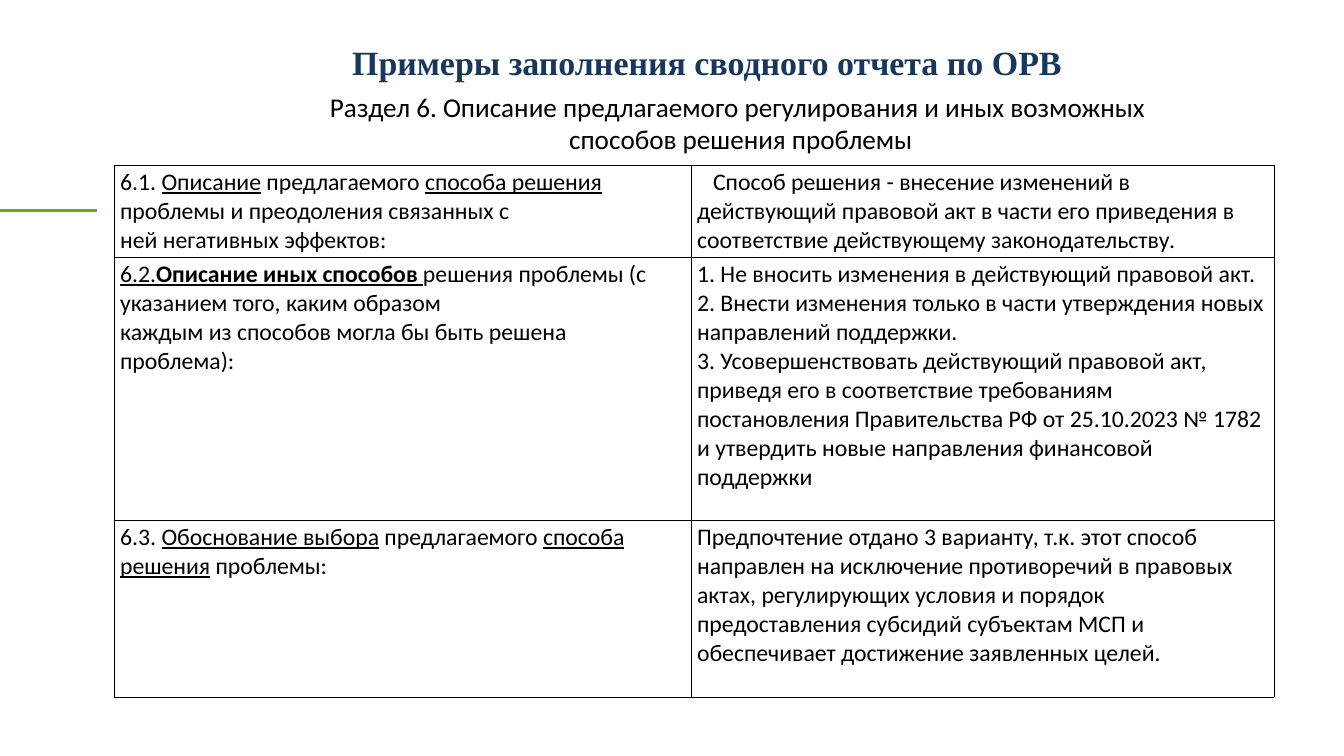
from pptx import Presentation
from pptx.dml.color import RGBColor as Rgb
from pptx.enum.shapes import MSO_SHAPE as Kind
from pptx.enum.text import PP_ALIGN as Align
from pptx.oxml import parse_xml
from pptx.oxml.ns import nsdecls
from pptx.util import Pt

PX = 14966  # EMU in one px
THEME = {
    "title": ("Times New Roman", 40, "17375E", True),
    "lead": ("Calibri", 32, "000000", False),
    "cell": ("Calibri", 28, "000000", False),
    "accent": "66A82F",
    "border": "000000",
}
U, B = "under", "under bold"


def write(frame, paras, role, align=Align.LEFT):
    """Fill a frame with paragraphs, each a list of (text, style) runs."""
    name, size, color, bold = THEME[role]
    frame.word_wrap = True
    for i, runs in enumerate(paras):
        para = frame.paragraphs[0] if i == 0 else frame.add_paragraph()
        para.alignment = align
        font = para.font
        font.name, font.size, font.bold = name, Pt(size), bold
        font.color.rgb = Rgb.from_string(color)
        for text, style in runs:
            run = para.add_run()
            run.text = text
            if "under" in style:
                run.font.underline = True
            if "bold" in style:
                run.font.bold = True


def edge(cell):
    """Draw a thin line on all four sides of a cell."""
    props = cell._tc.get_or_add_tcPr()
    for i, side in enumerate("LRTB"):
        props.insert(i, parse_xml(
            f'<a:ln{side} {nsdecls("a")} w="12700"><a:solidFill>'
            f'<a:srgbClr val="{THEME["border"]}"/></a:solidFill></a:ln{side}>'))


deck = Presentation()
deck.slide_width, deck.slide_height = 1344 * PX, 756 * PX
slide = deck.slides.add_slide(deck.slide_layouts[6])
shapes = slide.shapes

# Green accent bar
bar = shapes.add_shape(Kind.RECTANGLE, 0, 209 * PX, 97 * PX, 3 * PX)
bar.shadow.inherit = False
bar.fill.solid()
bar.fill.fore_color.rgb = Rgb.from_string(THEME["accent"])
bar.line.fill.background()

# Title and section heading
heads = [
    ("title", (237, 39, 940, 47), ["Примеры заполнения сводного отчета по ОРВ"]),
    ("lead", (304, 87, 874, 72),
     ["Раздел 6. Описание предлагаемого регулирования и иных возможных ",
      "способов решения проблемы"]),
]
for role, spot, lines in heads:
    box = shapes.add_textbox(*(n * PX for n in spot))
    write(box.text_frame, [[(line, "")] for line in lines], role, Align.CENTER)

# Report table
rows = [
    ([[("6.1. ", ""), ("Описание", U), (" предлагаемого ", ""),
       ("способа решения ", U), ("проблемы и преодоления связанных с", "")],
      [("ней негативных эффектов:", "")]],
     [[("Способ решения - внесение изменений в действующий правовой акт "
        "в части его приведения в", "")],
      [("соответствие действующему законодательству.", "")]]),
    ([[("6.2.", U), ("Описание иных способов ", B),
       ("решения проблемы (с указанием того, каким образом", "")],
      [("каждым из способов могла бы быть решена проблема):", "")]],
     [[("1. Не вносить изменения в действующий правовой акт.", "")],
      [("2. Внести изменения только в части утверждения новых "
        "направлений поддержки.", "")],
      [("3. Усовершенствовать действующий правовой акт, приведя его в "
        "соответствие требованиям постановления Правительства РФ от "
        "25.10.2023 № 1782 и утвердить новые направления финансовой "
        "поддержки", "")]]),
    ([[("6.3. ", ""), ("Обоснование выбора", U), (" предлагаемого ", ""),
       ("способа", U), (" ", ""), ("решения", U), (" проблемы:", "")]],
     [[("Предпочтение отдано 3 варианту, т.к. этот способ направлен на "
        "исключение противоречий в правовых актах, регулирующих условия и "
        "порядок предоставления субсидий субъектам МСП и обеспечивает "
        "достижение заявленных целей.", "")]]),
]
wide, high = (577, 583), (92, 263, 177)
table = shapes.add_table(len(high), len(wide), 114 * PX, 165 * PX,
                         sum(wide) * PX, sum(high) * PX).table
table.first_row = table.horz_banding = False
for col, width in zip(table.columns, wide):
    col.width = width * PX
for r, row in enumerate(rows):
    table.rows[r].height = high[r] * PX
    for c, paras in enumerate(row):
        cell = table.cell(r, c)
        cell.fill.background()
        edge(cell)
        write(cell.text_frame, paras, "cell")

# First-line indent of the first answer
first = table.cell(0, 1).text_frame.paragraphs[0]
props = first._p.get_or_add_pPr()
props.set("marL", "0")
props.set("indent", str(16 * PX))

deck.save("out.pptx")
